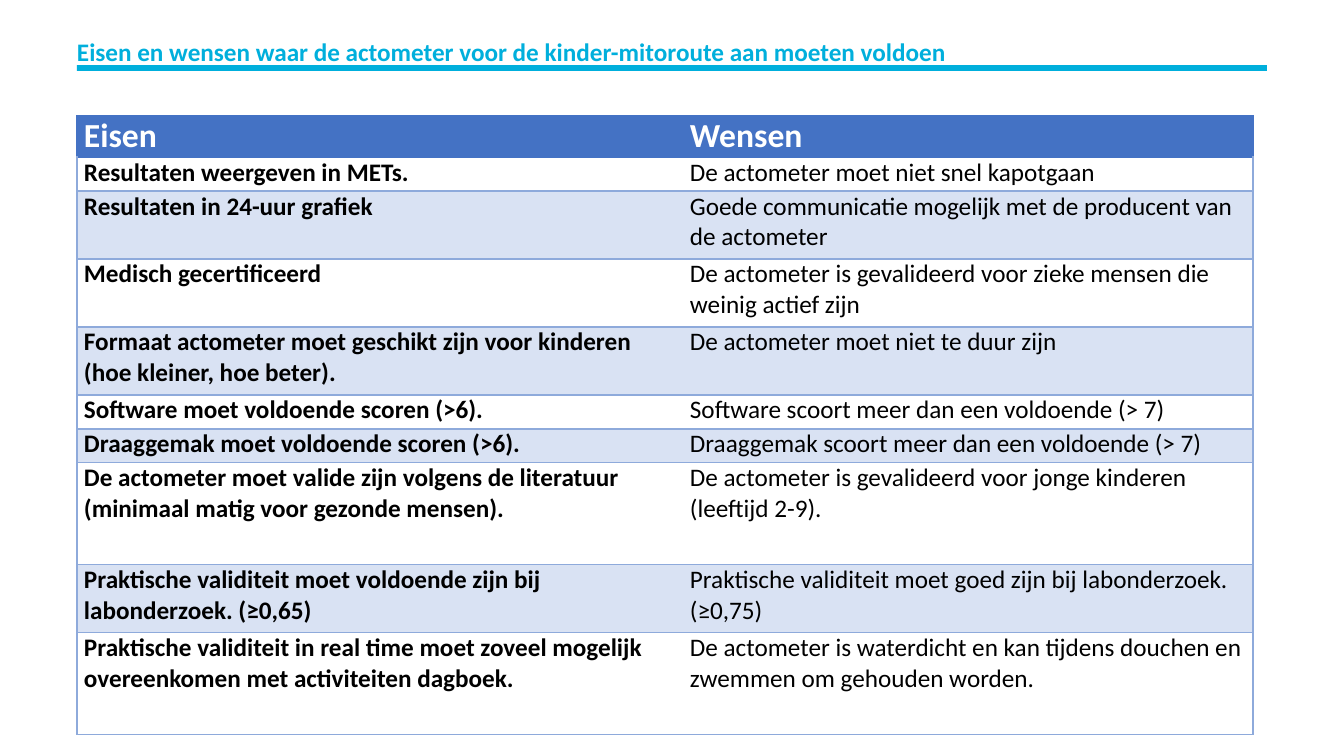
from lxml import etree
from pptx import Presentation
from pptx import util as u
from pptx.dml.color import RGBColor
from pptx.enum import shapes, text
from pptx.oxml import ns

TITLE = "Eisen en wensen waar de actometer voor de kinder-mitoroute aan moeten voldoen"
ROWS = [
    (41, "Eisen", "Wensen"),
    (34, "Resultaten weergeven in METs.", "De actometer moet niet snel kapotgaan"),
    (68, "Resultaten in 24-uur grafiek",
     "Goede communicatie mogelijk met de producent van de actometer"),
    (68, "Medisch gecertificeerd",
     "De actometer is gevalideerd voor zieke mensen die weinig actief zijn"),
    (68, "Formaat actometer moet geschikt zijn voor kinderen (hoe kleiner, hoe beter).",
     "De actometer moet niet te duur zijn"),
    (34, "Software moet voldoende scoren (>6).",
     "Software scoort meer dan een voldoende (> 7)"),
    (34, "Draaggemak moet voldoende scoren (>6).",
     "Draaggemak scoort meer dan een voldoende (> 7)"),
    (102, "De actometer moet valide zijn volgens de literatuur (minimaal matig voor gezonde mensen).",
     "De actometer is gevalideerd voor jonge kinderen (leeftijd 2-9)."),
    (68, "Praktische validiteit moet voldoende zijn bij labonderzoek. (≥0,65)",
     "Praktische validiteit moet goed zijn bij labonderzoek. (≥0,75)"),
    (102, "Praktische validiteit in real time moet zoveel mogelijk overeenkomen met activiteiten dagboek.",
     "De actometer is waterdicht en kan tijdens douchen en zwemmen om gehouden worden."),
]
COLUMNS = (606, 570)
COLORS = {"accent": "00AFDC", "header": "4472C4", "band": "D9E2F3",
          "border": "8EAADB", "white": "FFFFFF", "black": "000000"}
FONT = "Calibri"
LEFT, TABLE_TOP, BAR_WIDTH = 77, 116, 1190


def px(length):
    return u.Emu(round(length * 12192000 / 1344))


def rgb(name):
    return RGBColor.from_string(COLORS[name])


def write(frame, words, size=18, color="black", bold=False):
    para = frame.paragraphs[0]
    para.alignment = text.PP_ALIGN.LEFT
    span = para.add_run()
    span.text = words
    span.font.name = FONT
    span.font.size = u.Pt(size)
    span.font.bold = bold
    span.font.color.rgb = rgb(color)


def draw_borders(cell, sides):
    properties = cell._tc.get_or_add_tcPr()
    for index, (side, color) in enumerate(sides.items()):
        line = etree.Element(ns.qn(f"a:ln{side}"), w=str(u.Pt(1)))
        if color:
            fill = etree.SubElement(line, ns.qn("a:solidFill"))
            etree.SubElement(fill, ns.qn("a:srgbClr"), val=COLORS[color])
        else:
            etree.SubElement(line, ns.qn("a:noFill"))
        properties.insert(index, line)


def add_title(page):
    title = page.shapes.title
    title.left, title.top, title.width, title.height = map(px, (LEFT, 36, BAR_WIDTH, 58))
    frame = title.text_frame
    frame.margin_left = frame.margin_top = frame.margin_right = frame.margin_bottom = 0
    frame.word_wrap = True
    frame.auto_size = text.MSO_AUTO_SIZE.NONE
    frame.vertical_anchor = text.MSO_ANCHOR.TOP
    write(frame, TITLE, color="accent", bold=True)
    bar = page.shapes.add_shape(shapes.MSO_SHAPE.RECTANGLE,
                                *map(px, (LEFT, 65, BAR_WIDTH, 6)))
    bar.shadow.inherit = False
    bar.fill.solid()
    bar.fill.fore_color.rgb = rgb("accent")
    bar.line.fill.background()
    title._element.addprevious(bar._element)


def add_requirements(page):
    height = sum(row[0] for row in ROWS)
    table = page.shapes.add_table(
        len(ROWS), len(COLUMNS), *map(px, (LEFT, TABLE_TOP, sum(COLUMNS), height))).table
    table.horz_banding = False
    for column, width in zip(table.columns, COLUMNS):
        column.width = px(width)
    for r, (row_height, *entries) in enumerate(ROWS):
        table.rows[r].height = px(row_height)
        header = r == 0
        edge = "header" if header else "border"
        for c, words in enumerate(entries):
            cell = table.cell(r, c)
            cell.margin_left = cell.margin_right = px(7)
            cell.margin_top = cell.margin_bottom = 0
            if header or r % 2 == 0:
                cell.fill.solid()
                cell.fill.fore_color.rgb = rgb("header" if header else "band")
            else:
                cell.fill.background()
            write(cell.text_frame, words, size=24 if header else 18,
                  color="white" if header else "black", bold=header or c == 0)
            draw_borders(cell, {"L": edge if c == 0 else None,
                                "R": edge if c == 1 else None,
                                "T": "header" if r < 2 else "border",
                                "B": edge})


def main():
    deck = Presentation()
    deck.slide_width, deck.slide_height = px(1344), px(756)
    page = deck.slides.add_slide(deck.slide_layouts[5])
    add_title(page)
    add_requirements(page)
    deck.save("out.pptx")


if __name__ == "__main__":
    main()
